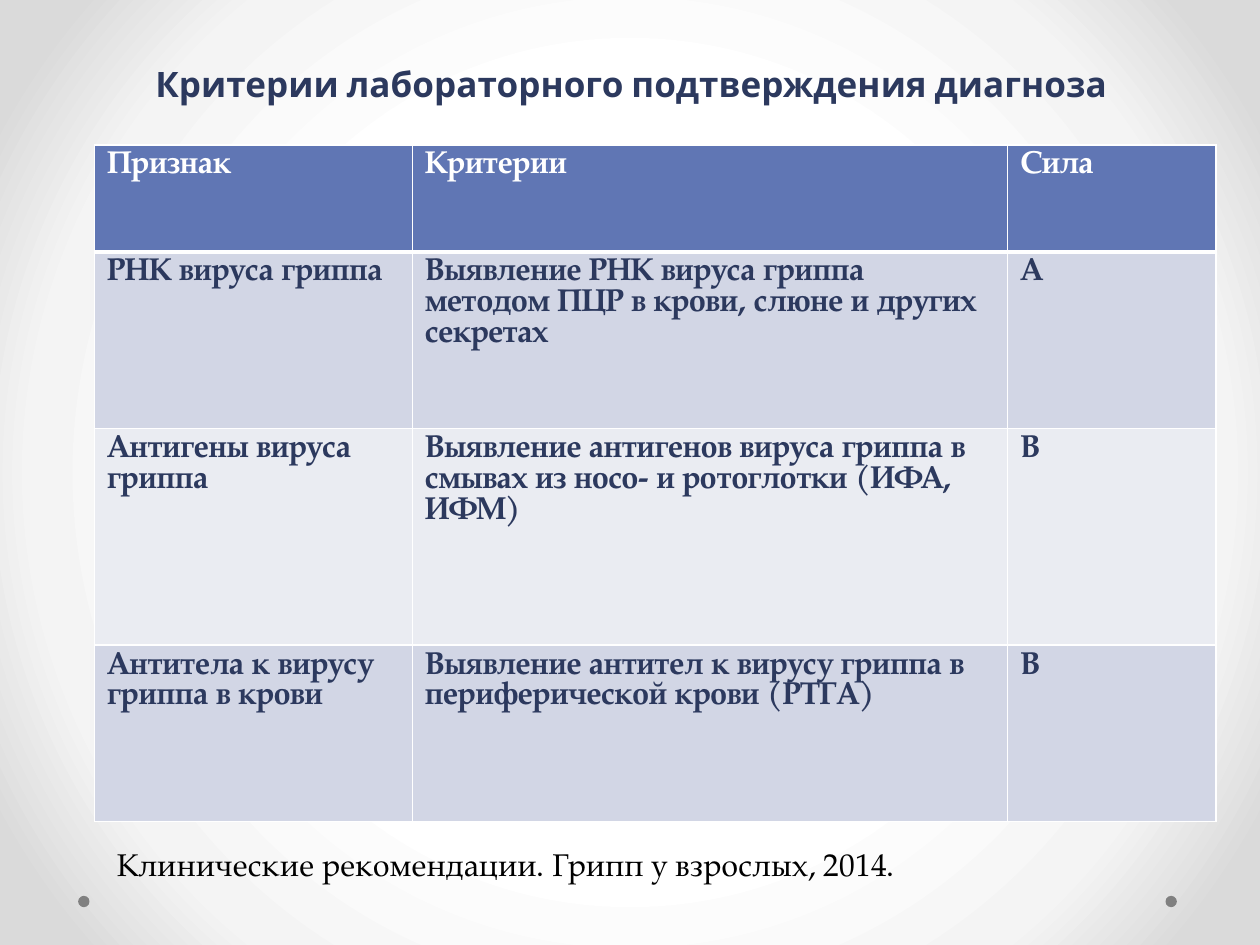
from dataclasses import dataclass
from lxml import etree
from pptx import Presentation
from pptx.dml.color import RGBColor as Rgb
from pptx.enum.shapes import MSO_SHAPE as Shape
from pptx.enum.text import MSO_ANCHOR as Anchor, PP_ALIGN as Align
from pptx.oxml import parse_xml
from pptx.oxml.ns import qn
from pptx.util import Inches, Pt


@dataclass(frozen=True)
class Theme:
    head: str = "Cabin"
    body: str = "TeX Gyre Pagella"
    navy: str = "2C395E"
    blue: str = "6076B4"
    white: str = "FFFFFF"
    black: str = "000000"
    gray: str = "808080"
    bands: tuple = ("D2D6E5", "EAECF2")
    stops: tuple = ((50, "FFFFFF"), (76, "F4F4F4"), (92, "DADADA"))
    big: int = 20
    mid: int = 18


THEME = Theme()
ROWS = [
    ("Признак", "Критерии", "Сила"),
    ("РНК вируса гриппа",
     "Выявление РНК вируса гриппа методом ПЦР в крови, слюне и других секретах", "А"),
    ("Антигены вируса гриппа",
     "Выявление антигенов вируса гриппа в смывах из носо- и ротоглотки (ИФА, ИФМ)", "В"),
    ("Антитела к вирусу гриппа в крови",
     "Выявление антител к вирусу гриппа в периферической крови (РТГА)", "В"),
]
WIDTHS = (2.52, 4.72, 1.65)
HEIGHTS = (0.85, 1.4, 1.72, 1.4)


def style(frame, face, size, color, bold=False):
    for part in frame.paragraphs:
        for run in part.runs:
            font = run.font
            font.name, font.size, font.bold = face, Pt(size), bold
            font.color.rgb = Rgb.from_string(color)


def paint(item, color):
    item.fill.solid()
    item.fill.fore_color.rgb = Rgb.from_string(color)


def add_back(slide):
    fill = slide.background.fill
    fill.gradient()
    grad = slide._element.find(".//" + qn("a:gradFill"))
    stops = "".join(
        f'<a:gs pos="{pos * 1000}"><a:srgbClr val="{color}"/></a:gs>'
        for pos, color in THEME.stops)
    grad.getparent().replace(grad, parse_xml(
        '<a:gradFill xmlns:a="http://schemas.openxmlformats.org/drawingml/2006/main" '
        f'rotWithShape="1"><a:gsLst>{stops}</a:gsLst><a:path path="circle">'
        '<a:fillToRect l="50000" t="50000" r="50000" b="50000"/></a:path></a:gradFill>'))


def add_dots(slide, left, top, width, size):
    for x in (left, left + width - size):
        dot = slide.shapes.add_shape(
            Shape.OVAL, Inches(x), Inches(top), Inches(size), Inches(size))
        dot.shadow.inherit = False
        paint(dot, THEME.gray)
        dot.line.fill.background()


def add_text(slide, text, left, top, width, height):
    box = slide.shapes.add_textbox(
        Inches(left), Inches(top), Inches(width), Inches(height))
    frame = box.text_frame
    frame.word_wrap = True
    frame.text = text
    return frame


def add_title(slide, *box):
    frame = add_text(slide, "Критерии лабораторного подтверждения диагноза", *box)
    frame.vertical_anchor = Anchor.BOTTOM
    frame.paragraphs[0].alignment = Align.CENTER
    frame.paragraphs[0].line_spacing = Pt(58)
    style(frame, THEME.head, THEME.big, THEME.navy, True)


def add_note(slide, *box):
    frame = add_text(slide, "Клинические рекомендации. Грипп у взрослых, 2014.", *box)
    style(frame, THEME.body, THEME.mid, THEME.black)


def set_edges(cell, top, low):
    props = cell._tc.get_or_add_tcPr()
    sides = (("a:lnL", 1), ("a:lnR", 1), ("a:lnT", top), ("a:lnB", low))
    for spot, (tag, width) in enumerate(sides):
        line = etree.Element(qn(tag), w=str(Pt(width)))
        fill = etree.SubElement(line, qn("a:solidFill"))
        etree.SubElement(fill, qn("a:srgbClr"), val=THEME.white)
        props.insert(spot, line)


def add_grid(slide, left, top, width, height):
    grid = slide.shapes.add_table(
        len(ROWS), len(WIDTHS), Inches(left), Inches(top),
        Inches(width), Inches(height)).table
    for col, part in zip(grid.columns, WIDTHS):
        col.width = Inches(width * part / sum(WIDTHS))
    for row, part in zip(grid.rows, HEIGHTS):
        row.height = Inches(height * part / sum(HEIGHTS))
    for r, texts in enumerate(ROWS):
        for c, text in enumerate(texts):
            cell = grid.cell(r, c)
            cell.text_frame.text = text
            paint(cell, THEME.bands[(r - 1) % 2] if r else THEME.blue)
            style(cell.text_frame, THEME.body, THEME.mid,
                  THEME.navy if r else THEME.white, True)
            set_edges(cell, 3 if r == 1 else 1, 1 if r else 3)


def main():
    deck = Presentation()
    deck.slide_width, deck.slide_height = Inches(10), Inches(7.5)
    slide = deck.slides.add_slide(deck.slide_layouts[6])
    add_back(slide)
    add_dots(slide, 0.62, 7.11, 8.72, 0.09)
    add_title(slide, 0.51, 0.36, 9, 0.52)
    add_grid(slide, 0.75, 1.15, 8.9, 5.37)
    add_note(slide, 0.83, 6.66, 8.82, 0.4)
    deck.save("out.pptx")


if __name__ == "__main__":
    main()
